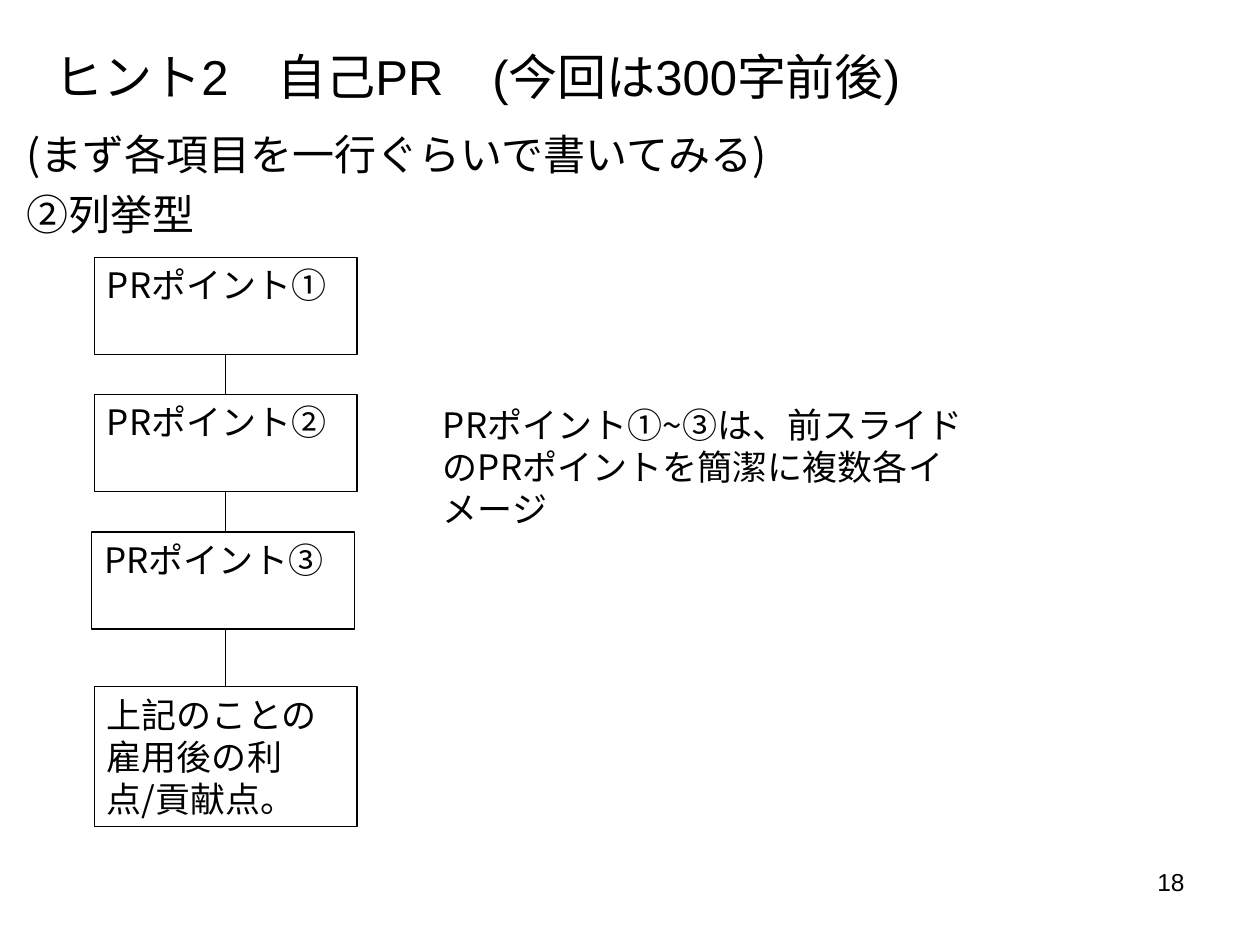
from lxml.etree import SubElement
from pptx import Presentation
from pptx.dml.color import RGBColor
from pptx.enum.shapes import MSO_CONNECTOR, MSO_SHAPE
from pptx.enum.text import MSO_ANCHOR, MSO_AUTO_SIZE, PP_ALIGN
from pptx.oxml.ns import qn
from pptx.util import Pt

BLACK, WHITE = "000000", "FFFFFF"
JAPANESE = "Noto Sans CJK JP"
BOX_LEFT, BOX_WIDTH, BOX_HEIGHT = 54, 150, 55.5
FIRST_TOP, BOX_STEP = 147, 78.5


def color(value):
    return RGBColor.from_string(value)


def place(shape, left, top, width, height):
    position = {"left": left, "top": top, "width": width, "height": height}
    for name, value in position.items():
        setattr(shape, name, Pt(value))


def write(shape, lines, size, font=JAPANESE, spacing=None,
          align=PP_ALIGN.LEFT, anchor=MSO_ANCHOR.TOP):
    frame = shape.text_frame
    frame_format = {"word_wrap": True, "auto_size": MSO_AUTO_SIZE.NONE,
                    "vertical_anchor": anchor}
    for name, value in frame_format.items():
        setattr(frame, name, value)
    frame.text = "\n".join(lines)
    paragraph_format = {"alignment": align, "space_before": Pt(0),
                        "line_spacing": Pt(spacing) if spacing else 1.0}
    for paragraph in frame.paragraphs:
        for name, value in paragraph_format.items():
            setattr(paragraph, name, value)
        for run in paragraph.runs:
            for name, value in {"name": font, "size": Pt(size)}.items():
                setattr(run.font, name, value)
            run.font.color.rgb = color(BLACK)
            # East Asian typeface for the Japanese characters
            SubElement(run.font._element, qn("a:ea"), typeface=JAPANESE)


def remove_bullets(shape):
    for paragraph in shape.text_frame.paragraphs:
        properties = paragraph._p.get_or_add_pPr()
        properties.set("marL", "0")
        properties.set("indent", "0")
        SubElement(properties, qn("a:buNone"))


def add_text(slide, lines, area, size, **options):
    shape = slide.shapes.add_textbox(*map(Pt, area))
    write(shape, lines, size, **options)


def add_box(slide, text, left, top, height):
    shape = slide.shapes.add_shape(
        MSO_SHAPE.RECTANGLE, Pt(left), Pt(top), Pt(BOX_WIDTH), Pt(height))
    shape.shadow.inherit = False
    shape.fill.solid()
    shape.fill.fore_color.rgb = color(WHITE)
    shape.line.color.rgb = color(BLACK)
    shape.line.width = Pt(0.75)
    write(shape, [text], 20, spacing=24)


def add_vertical_line(slide, x, top, bottom):
    line = slide.shapes.add_connector(
        MSO_CONNECTOR.STRAIGHT, Pt(x), Pt(top), Pt(x), Pt(bottom))
    line.line.color.rgb = color(BLACK)
    line.line.width = Pt(0.75)
    SubElement(line._element.spPr, qn("a:effectLst"))


def main():
    presentation = Presentation()
    presentation.slide_width, presentation.slide_height = Pt(720), Pt(540)
    slide = presentation.slides.add_slide(presentation.slide_layouts[1])

    # Title and introduction
    title, body = slide.placeholders
    place(title, 24, 16, 612, 48)
    write(title, ["ヒント2　自己PR　(今回は300字前後)"], 28, font="Arial",
          anchor=MSO_ANCHOR.BOTTOM)
    place(body, 8, 64, 690, 77)
    write(body, ["(まず各項目を一行ぐらいで書いてみる)", "②列挙型"], 24, spacing=34.5)
    remove_bullets(body)

    # Chain of points, with the line behind the boxes
    conclusion_top = 392.5
    add_vertical_line(slide, BOX_LEFT + BOX_WIDTH / 2, FIRST_TOP, conclusion_top)
    for index, (mark, shift) in enumerate([("①", 0), ("②", 0), ("③", -1.5)]):
        add_box(slide, f"PRポイント{mark}", BOX_LEFT + shift,
                FIRST_TOP + index * BOX_STEP, BOX_HEIGHT)
    add_box(slide, "上記のことの雇用後の利点/貢献点。", BOX_LEFT, conclusion_top, 80)

    # Explanation and page number
    add_text(slide, ["PRポイント①~③は、前スライドのPRポイントを簡潔に複数各イメージ"],
             (246, 227, 312, 80), 20, spacing=24)
    add_text(slide, ["18"], (516, 492, 168, 37.5), 14, font="Arial",
             align=PP_ALIGN.RIGHT)

    presentation.save("out.pptx")


if __name__ == "__main__":
    main()
